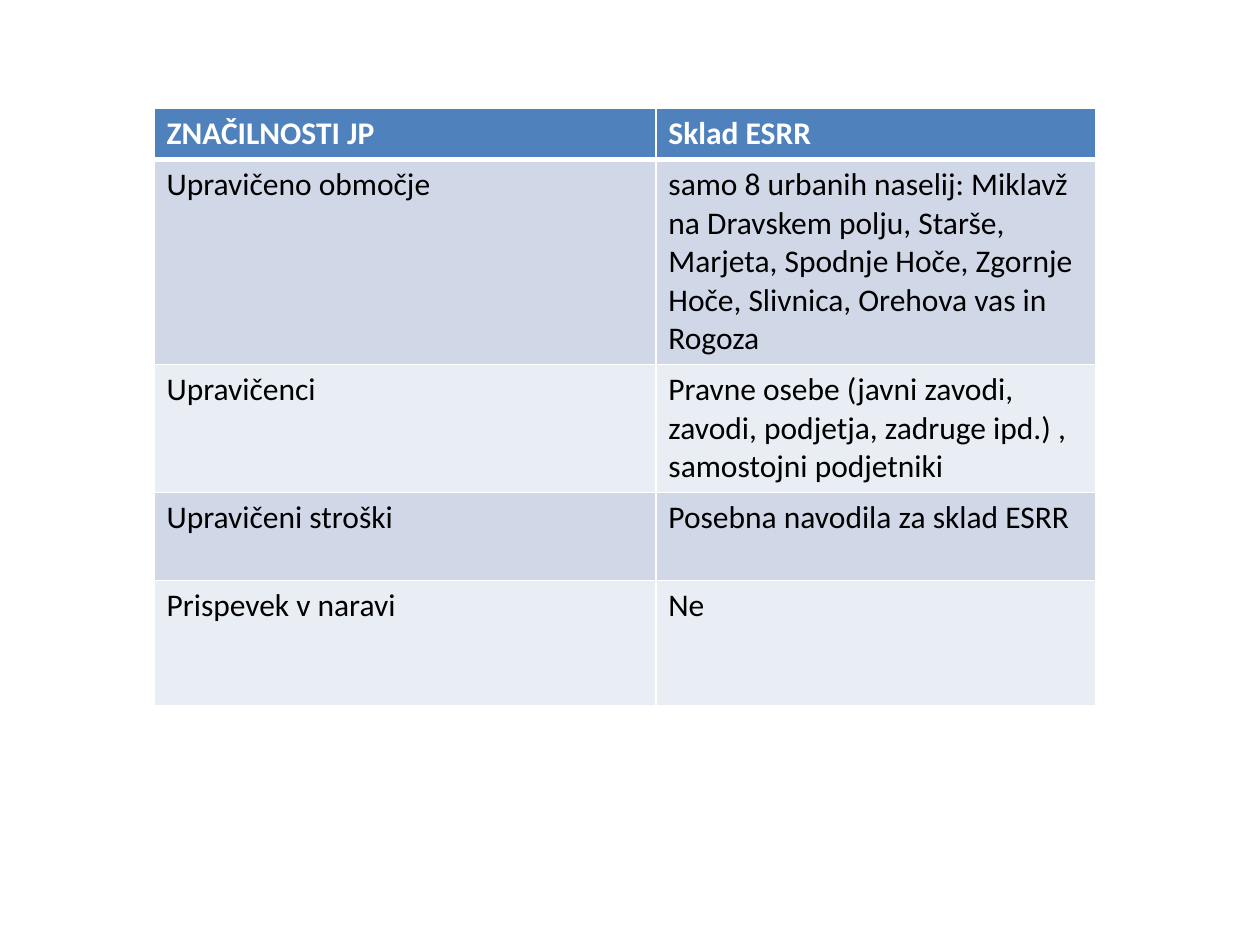
from lxml.etree import SubElement
from pptx import Presentation
from pptx.dml.color import RGBColor
from pptx.oxml.ns import qn
from pptx.util import Pt

WHITE = RGBColor(0xFF, 0xFF, 0xFF)
BLACK = RGBColor(0x00, 0x00, 0x00)
HEADER_BLUE = RGBColor(0x4F, 0x81, 0xBD)
BAND_FILLS = (RGBColor(0xD0, 0xD8, 0xE8), RGBColor(0xE9, 0xED, 0xF4))

ROWS = [
    ("ZNAČILNOSTI JP", "Sklad ESRR"),
    ("Upravičeno območje",
     "samo 8 urbanih naselij: Miklavž na Dravskem polju, Starše, Marjeta, "
     "Spodnje Hoče, Zgornje Hoče, Slivnica, Orehova vas in Rogoza"),
    ("Upravičenci",
     "Pravne osebe (javni zavodi, zavodi, podjetja, zadruge ipd.) , "
     "samostojni podjetniki"),
    ("Upravičeni stroški", "Posebna navodila za sklad ESRR"),
    ("Prispevek v naravi", "Ne"),
]
COLUMN_WIDTHS = (286.8, 251.4)
ROW_HEIGHTS = (28.8, 117, 73, 50.4, 71.5)
LEFT, TOP = 88, 62


def set_border(cell, side, width):
    """Draw a solid white border; side is L, R, T or B."""
    line = SubElement(cell._tc.get_or_add_tcPr(), qn(f"a:ln{side}"), w=str(Pt(width)))
    fill = SubElement(line, qn("a:solidFill"))
    SubElement(fill, qn("a:srgbClr"), val=str(WHITE))


def format_cell(cell, text, row_index):
    is_header = row_index == 0
    cell.text_frame.text = text
    font = cell.text_frame.paragraphs[0].runs[0].font
    font.name = "Calibri"
    font.size = Pt(18)
    font.bold = is_header
    font.color.rgb = WHITE if is_header else BLACK
    for side in "LRTB":
        touches_header = (row_index, side) in ((0, "B"), (1, "T"))
        set_border(cell, side, 3 if touches_header else 1)
    cell.fill.solid()
    cell.fill.fore_color.rgb = HEADER_BLUE if is_header else BAND_FILLS[(row_index - 1) % 2]


deck = Presentation()
deck.slide_width, deck.slide_height = Pt(720), Pt(540)
page = deck.slides.add_slide(deck.slide_layouts[6])

table = page.shapes.add_table(
    len(ROWS), len(COLUMN_WIDTHS), Pt(LEFT), Pt(TOP),
    Pt(sum(COLUMN_WIDTHS)), Pt(sum(ROW_HEIGHTS))).table
for column, width in zip(table.columns, COLUMN_WIDTHS):
    column.width = Pt(width)
for row_index, (row, height) in enumerate(zip(table.rows, ROW_HEIGHTS)):
    row.height = Pt(height)
    for cell, text in zip(row.cells, ROWS[row_index]):
        format_cell(cell, text, row_index)

deck.save("out.pptx")
